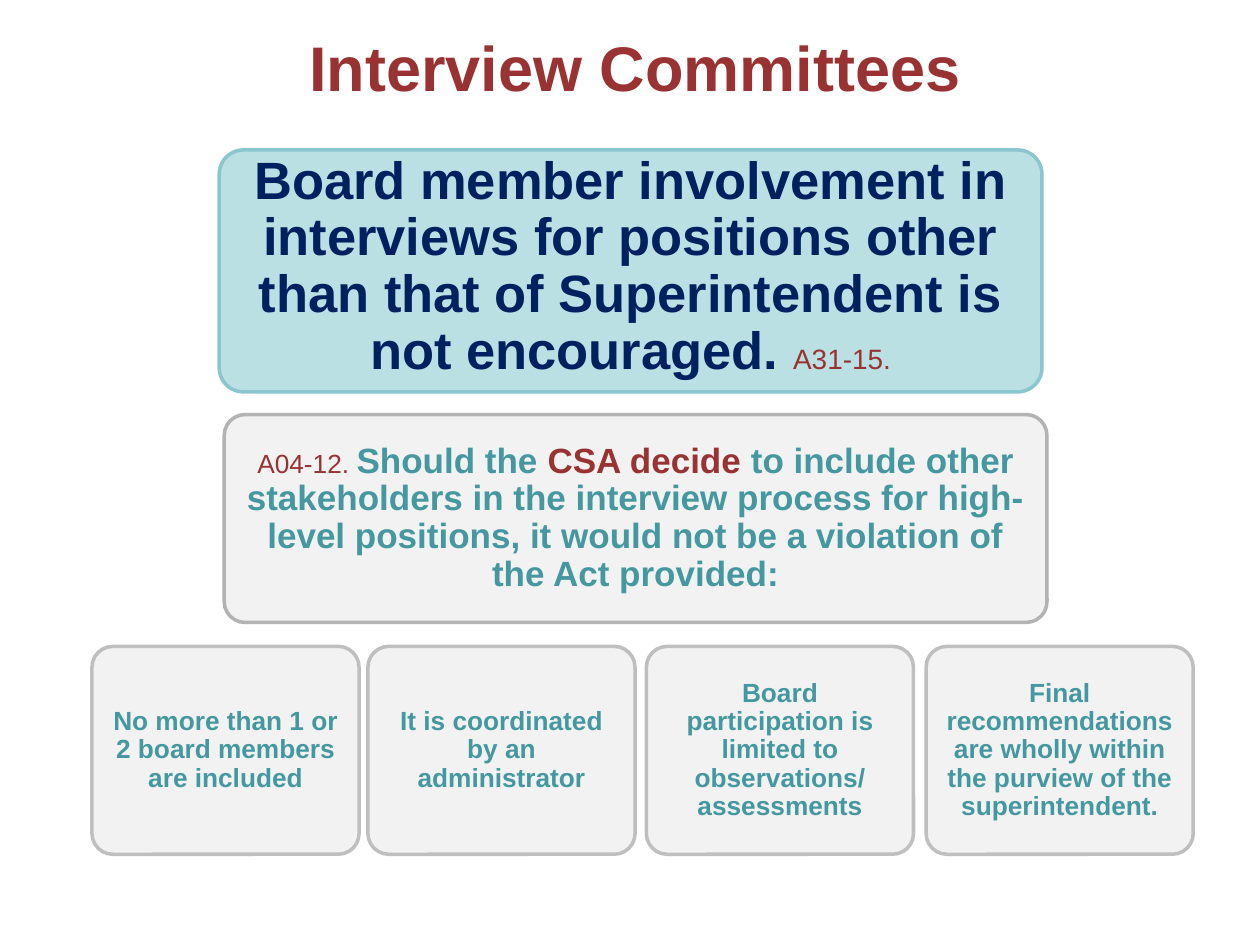
from dataclasses import dataclass

from pptx import Presentation
from pptx.dml.color import RGBColor
from pptx.enum import shapes, text
from pptx.util import Inches, Pt

FONT = "Arial"
RED, NAVY, TEAL = "993333", "002060", "4597A0"
PALE_GRAY = "F2F2F2"


@dataclass
class Run:
    text: str
    size: float
    color: str
    bold: bool = True


@dataclass
class Card:
    left: float
    top: float
    width: float
    height: float
    fill: str
    line: str
    runs: list[Run]
    side_inset: float = 0.06
    bottom_inset: float = 0.06


def rgb(value: str) -> RGBColor:
    return RGBColor.from_string(value)


def add_runs(p, runs: list[Run]) -> None:
    p.alignment = text.PP_ALIGN.CENTER
    for run in runs:
        r = p.add_run()
        r.text = run.text
        r.font.name = FONT
        r.font.size = Pt(run.size)
        r.font.bold = run.bold
        r.font.color.rgb = rgb(run.color)


def add_card(s, card: Card) -> None:
    sp = s.shapes.add_shape(
        shapes.MSO_SHAPE.ROUNDED_RECTANGLE,
        Inches(card.left), Inches(card.top),
        Inches(card.width), Inches(card.height))
    sp.adjustments[0] = 0.1
    sp.shadow.inherit = False
    sp.fill.solid()
    sp.fill.fore_color.rgb = rgb(card.fill)
    sp.line.color.rgb = rgb(card.line)
    sp.line.width = Pt(2)

    tf = sp.text_frame
    tf.word_wrap = True
    tf.vertical_anchor = text.MSO_ANCHOR.MIDDLE
    tf.margin_left = tf.margin_right = Inches(card.side_inset)
    tf.margin_top = Inches(0.06)
    tf.margin_bottom = Inches(card.bottom_inset)
    p = tf.paragraphs[0]
    p.line_spacing = 0.9
    add_runs(p, card.runs)


def add_title(s, title: str) -> None:
    sp = s.shapes.title
    sp.left, sp.top = Inches(0.83), Inches(0.17)
    sp.width, sp.height = Inches(8.42), Inches(0.71)
    sp.text_frame.vertical_anchor = text.MSO_ANCHOR.MIDDLE
    add_runs(sp.text_frame.paragraphs[0], [Run(title, 36, RED)])


# Main statement and the exception below it
STATEMENT = Card(1.74, 1.19, 6.53, 1.92, "BBE0E3", "8AC6CD", [
    Run("Board member involvement in interviews for positions other than "
        "that of Superintendent is not encouraged. ", 30, NAVY),
    Run("A31-15.", 16, RED, bold=False),
], side_inset=0.12, bottom_inset=0.12)

EXCEPTION = Card(1.78, 3.29, 6.53, 1.65, PALE_GRAY, "B3B3B3", [
    Run("A04-12. ", 15, RED, bold=False),
    Run("Should the ", 20, TEAL),
    Run("CSA decide ", 20, RED),
    Run("to include other stakeholders in the interview process for "
        "high-level positions, it would not be a violation of the Act "
        "provided:", 20, TEAL),
])

# Conditions in the bottom row, by left edge
CONDITIONS = {
    0.73: "No more than 1 or 2 board members are included",
    2.92: "It is coordinated by an administrator",
    5.13: "Board participation is limited to observations/ assessments",
    7.35: "Final recommendations are wholly within the purview of the "
          "superintendent.",
}


def main() -> None:
    prs = Presentation()
    prs.slide_width, prs.slide_height = Inches(10), Inches(7.5)
    s = prs.slides.add_slide(prs.slide_layouts[5])

    add_title(s, "Interview Committees")
    add_card(s, STATEMENT)
    add_card(s, EXCEPTION)
    for left, condition in CONDITIONS.items():
        add_card(s, Card(left, 5.13, 2.12, 1.65, PALE_GRAY, "BFBFBF",
                         [Run(condition, 15, TEAL)]))

    prs.save("out.pptx")


if __name__ == "__main__":
    main()
